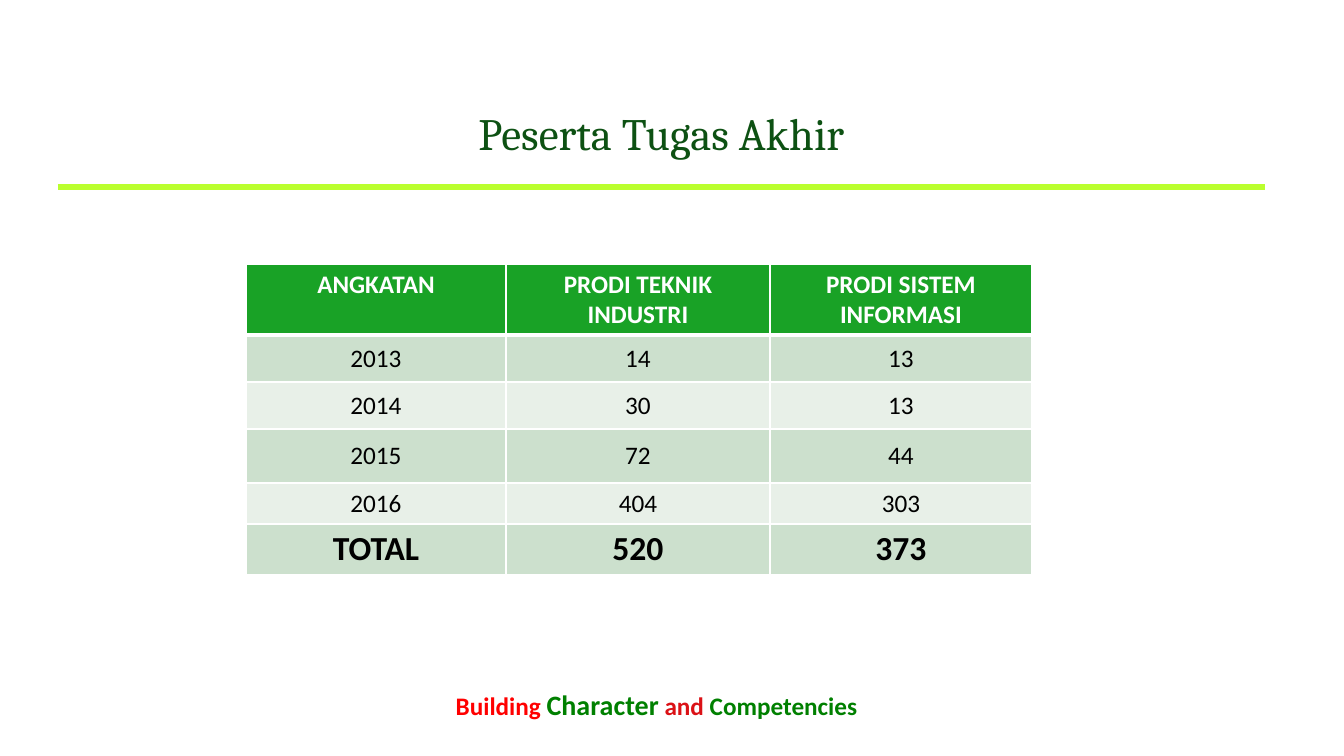
from lxml.etree import SubElement
from pptx import Presentation
from pptx.dml.color import RGBColor
from pptx.enum.shapes import MSO_CONNECTOR
from pptx.enum.text import MSO_ANCHOR, PP_ALIGN
from pptx.oxml.ns import qn
from pptx.util import Pt

WHITE = RGBColor(0xFF, 0xFF, 0xFF)
BLACK = RGBColor(0, 0, 0)
PINE = RGBColor(0x0D, 0x51, 0x13)
LIME = RGBColor(0xBA, 0xFF, 0x2E)
HEAD = RGBColor(0x19, 0xA2, 0x26)
BANDS = (RGBColor(0xCC, 0xE0, 0xCD), RGBColor(0xE8, 0xF0, 0xE8))
RED = RGBColor(0xFF, 0, 0)
BRICK = RGBColor(0xDB, 0x11, 0x16)
GREEN = RGBColor(0, 0x80, 0)

TITLE = "Peserta Tugas Akhir"
MOTTO = [
    ("Building ", 18, RED),
    ("Character", 20, GREEN),
    (" and ", 18, BRICK),
    ("Competencies", 18, GREEN),
]
ROWS = [
    ("ANGKATAN", "PRODI TEKNIK INDUSTRI", "PRODI SISTEM INFORMASI"),
    ("2013", "14", "13"),
    ("2014", "30", "13"),
    ("2015", "72", "44"),
    ("2016", "404", "303"),
    ("TOTAL", "520", "373"),
]
WIDTHS = (260, 264, 262)
HEIGHTS = (71, 47, 47, 54, 41, 51)


def px(n):
    return round(n * 914400 / 100.8)


def write(frame, runs, font="Calibri", bold=False, anchor=MSO_ANCHOR.TOP):
    """Fill a frame with one centred line of (text, size, colour) runs."""
    frame.word_wrap = True
    frame.vertical_anchor = anchor
    para = frame.paragraphs[0]
    para.alignment = PP_ALIGN.CENTER
    for text, size, color in runs:
        run = para.add_run()
        run.text = text
        run.font.name = font
        run.font.size = Pt(size)
        run.font.bold = bold
        run.font.color.rgb = color


def add_text(slide, box, runs, **style):
    shape = slide.shapes.add_textbox(*map(px, box))
    write(shape.text_frame, runs, **style)


def edge(cell, side, width):
    """Draw one white cell border, given its side as L, R, T or B."""
    line = SubElement(cell._tc.get_or_add_tcPr(), qn("a:ln" + side), w=str(Pt(width)))
    fill = SubElement(line, qn("a:solidFill"))
    SubElement(fill, qn("a:srgbClr"), val=str(WHITE))


def add_rule(slide):
    rule = slide.shapes.add_connector(
        MSO_CONNECTOR.STRAIGHT, px(58), px(187), px(1265), px(187))
    rule.line.color.rgb = LIME
    rule.line.width = Pt(5)
    SubElement(rule._element.spPr, qn("a:effectLst"))


def add_grid(slide):
    frame = slide.shapes.add_table(
        len(ROWS), len(WIDTHS), px(246), px(264), px(sum(WIDTHS)), px(sum(HEIGHTS)))
    table = frame.table
    for col, width in zip(table.columns, WIDTHS):
        col.width = px(width)
    last = len(ROWS) - 1
    for r, row in enumerate(ROWS):
        table.rows[r].height = px(HEIGHTS[r])
        thick = {0: "B", 1: "T"}.get(r)
        for c, text in enumerate(row):
            cell = table.cell(r, c)
            for side in "LRTB":
                edge(cell, side, 3 if side == thick else 1)
            cell.fill.solid()
            cell.fill.fore_color.rgb = BANDS[(r - 1) % 2] if r else HEAD
            write(cell.text_frame,
                  [(text, 24 if r == last else 18, BLACK if r else WHITE)],
                  bold=r in (0, last))
            cell.vertical_anchor = MSO_ANCHOR.MIDDLE if r else MSO_ANCHOR.TOP


def main():
    deck = Presentation()
    deck.slide_width, deck.slide_height = px(1344), px(756)
    slide = deck.slides.add_slide(deck.slide_layouts[6])
    add_rule(slide)
    add_text(slide, (313, 683, 687, 44), MOTTO, bold=True)
    add_text(slide, (47, 85, 1229, 95), [(TITLE, 32, PINE)],
             font="Cambria", anchor=MSO_ANCHOR.MIDDLE)
    add_grid(slide)
    deck.save("out.pptx")


if __name__ == "__main__":
    main()
